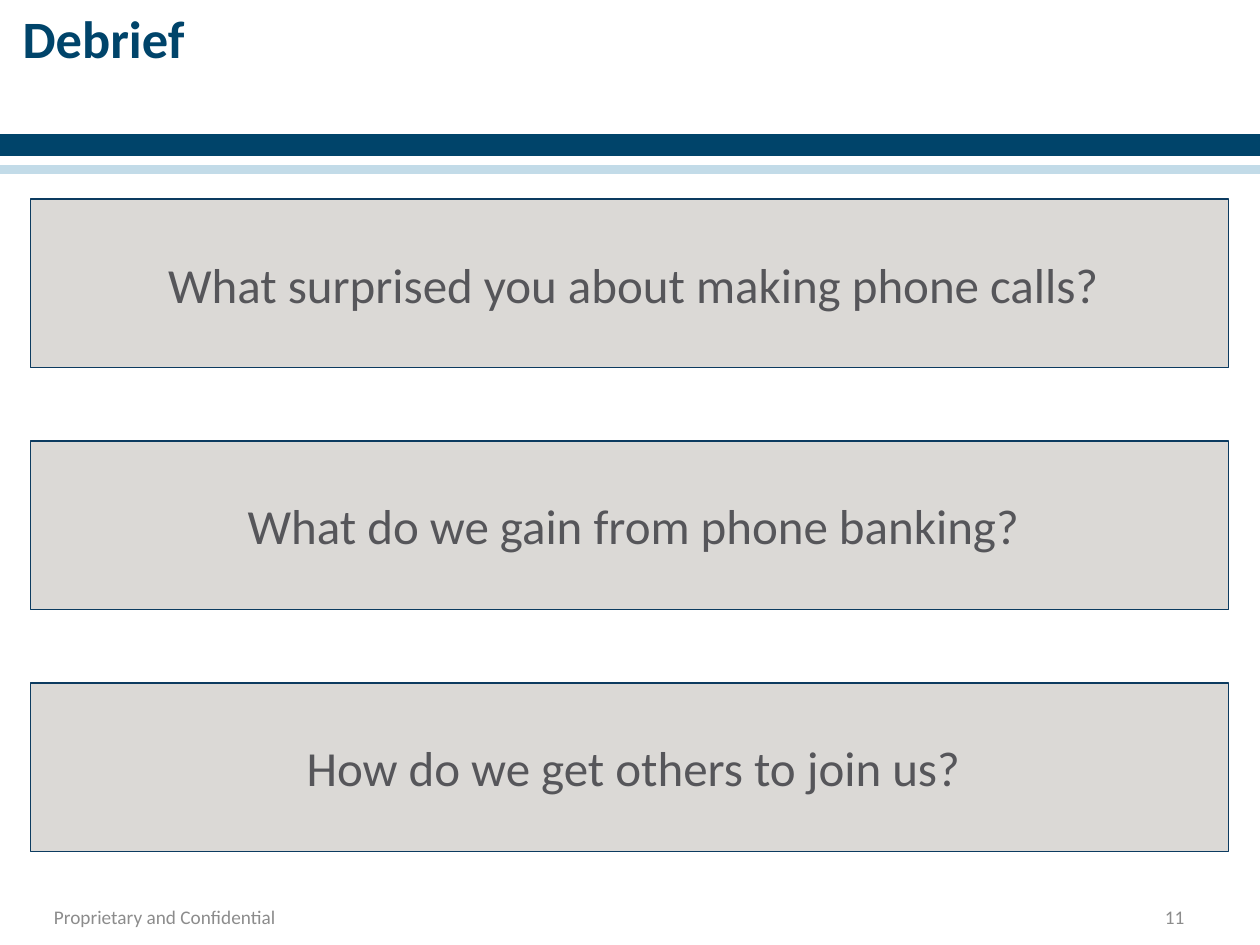
"""Build the Debrief slide with three discussion questions."""
import pptx
import pptx.util
import pptx.dml.color
import pptx.enum.shapes
import pptx.enum.text

Inches = pptx.util.Inches
Pt = pptx.util.Pt
Align = pptx.enum.text.PP_ALIGN
Anchor = pptx.enum.text.MSO_ANCHOR


class Theme:
    font = "Calibri"
    navy = "00446A"
    white = "FFFFFF"
    sky = "C2DBE8"
    panel = "DBD9D6"
    edge = "0C3B60"
    ink = "56565A"
    muted = "8C8C8C"
    title = 30
    body = 28
    small = 11


def add_box(slide, place, fill, line, width):
    box = slide.shapes.add_shape(
        pptx.enum.shapes.MSO_SHAPE.RECTANGLE, *map(Inches, place))
    box.shadow.inherit = False
    box.fill.solid()
    box.fill.fore_color.rgb = pptx.dml.color.RGBColor.from_string(fill)
    box.line.color.rgb = pptx.dml.color.RGBColor.from_string(line)
    box.line.width = Pt(width)
    return box


def set_text(shape, text, size, color, align, anchor, bold=False):
    frame = shape.text_frame
    frame.word_wrap = True
    frame.auto_size = pptx.enum.text.MSO_AUTO_SIZE.NONE
    frame.vertical_anchor = anchor
    frame.text = text
    para = frame.paragraphs[0]
    para.alignment = align
    para.font.name = Theme.font
    para.font.size = Pt(size)
    para.font.bold = bold
    para.font.color.rgb = pptx.dml.color.RGBColor.from_string(color)
    return para


deck = pptx.Presentation()
deck.slide_width = Inches(10)
deck.slide_height = Inches(7.5)
slide = deck.slides.add_slide(deck.slide_layouts[5])

bands = [(1.08, 0.25, Theme.navy), (1.25, 0.05, Theme.white), (1.32, 0.05, Theme.sky)]
for top, height, color in bands:
    add_box(slide, (0, top, 10, height), color, color, 2)

title = slide.shapes.title
title.left, title.top = Inches(0.08), Inches(0)
title.width, title.height = Inches(9), Inches(1.25)
set_text(title, "Debrief", Theme.title, Theme.navy, Align.LEFT, Anchor.TOP, True)

asks = [
    "What surprised you about making phone calls?",
    "What do we gain from phone banking?",
    "How do we get others to join us?",
]
for row, ask in enumerate(asks):
    place = (0.24, 1.58 + 1.92 * row, 9.51, 1.34)
    panel = add_box(slide, place, Theme.panel, Theme.edge, 0.75)
    para = set_text(panel, ask, Theme.body, Theme.ink, Align.CENTER, Anchor.MIDDLE)
    para._p.get_or_add_pPr().set("marL", str(Inches(0.06)))

notes = [
    (0.33, 2.57, "Proprietary and Confidential", Align.LEFT),
    (7.17, 2.33, "11", Align.RIGHT),
]
for left, width, text, align in notes:
    foot = slide.shapes.add_textbox(Inches(left), Inches(7.1), Inches(width), Inches(0.35))
    set_text(foot, text, Theme.small, Theme.muted, align, Anchor.MIDDLE)

deck.save("out.pptx")
